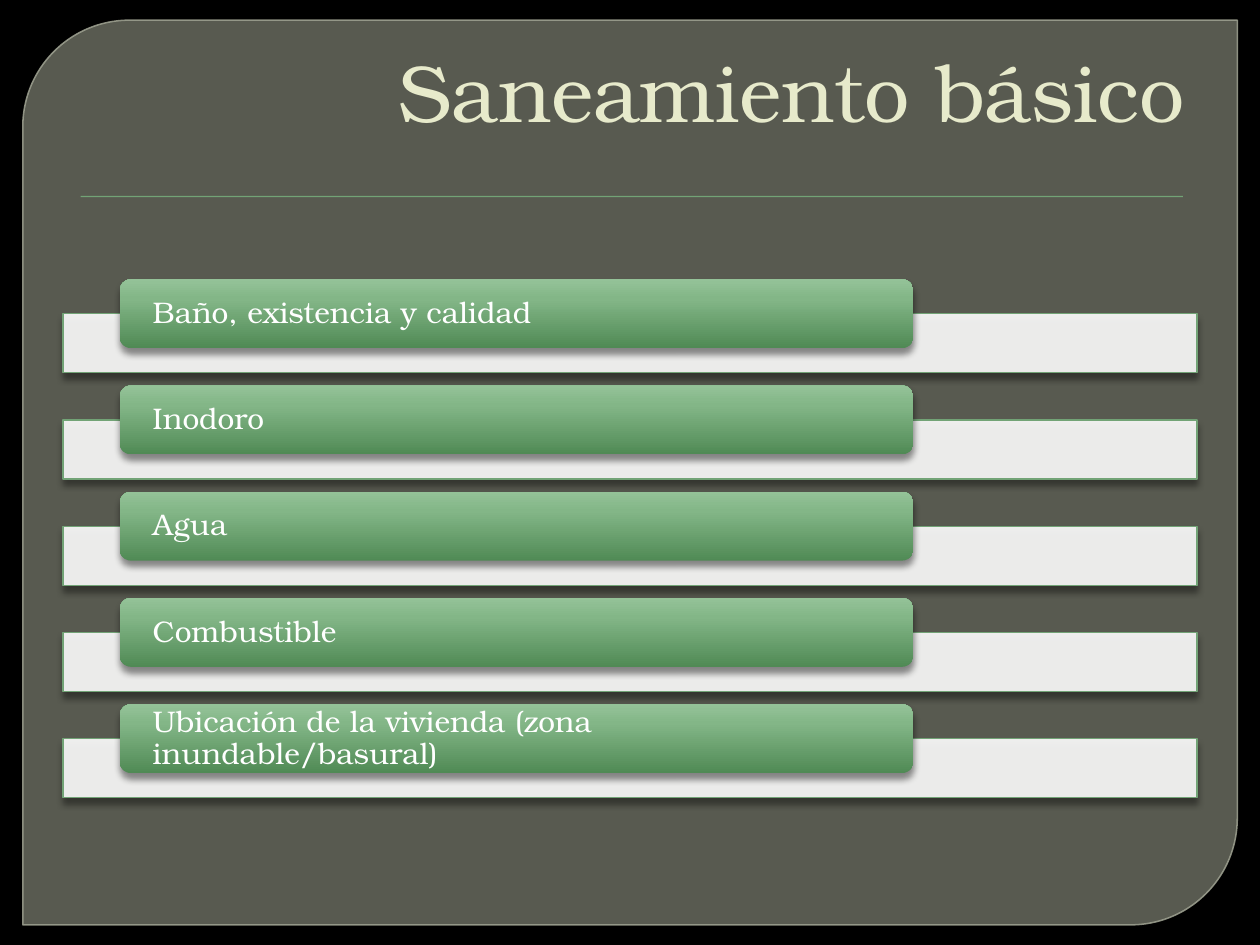
from copy import deepcopy

from pptx import Presentation
from pptx.dml.color import RGBColor
from pptx.enum.shapes import MSO_SHAPE as Preset
from pptx.enum.text import MSO_ANCHOR as Anchor, PP_ALIGN as Align
from pptx.oxml.ns import qn
from pptx.util import Pt
from lxml.etree import SubElement

COLORS = {
    "back": "000000", "panel": "888B7B", "edge": "9DA090", "green": "72A376",
    "title": "E7EACB", "white": "FFFFFF", "shadow": "000000",
}
TAG_STOPS = [(0, "508A55"), (0.72, "83B687"), (1, "94C298")]
FONT = "TeX Gyre Bonum"
TOPICS = [
    "Baño, existencia y calidad",
    "Inodoro",
    "Agua",
    "Combustible",
    "Ubicación de la vivienda (zona inundable/basural)",
]


def rgb(name):
    return RGBColor.from_string(COLORS[name])


def set_alpha(fill_parent, percent):
    color = fill_parent.find(qn("a:solidFill"))[0]
    SubElement(color, qn("a:alpha"), val=str(percent * 1000))


def add_shadow(shape, alpha, blur, distance):
    """Cast a soft shadow straight down; blur and distance are in points."""
    effects = shape._element.spPr.find(qn("a:effectLst"))
    outer = SubElement(effects, qn("a:outerShdw"), blurRad=str(Pt(blur)),
                       dist=str(Pt(distance)), dir="5400000", rotWithShape="0")
    color = SubElement(outer, qn("a:srgbClr"), val=COLORS["shadow"])
    SubElement(color, qn("a:alpha"), val=str(alpha * 1000))


def add_block(page, preset, left, top, width, height, fill=None, alpha=100,
              line=None, weight=0.75):
    shape = page.shapes.add_shape(preset, Pt(left), Pt(top), Pt(width), Pt(height))
    shape.shadow.inherit = False
    if fill:
        shape.fill.solid()
        shape.fill.fore_color.rgb = rgb(fill)
        set_alpha(shape._element.spPr, alpha)
    if line:
        shape.line.color.rgb = rgb(line)
        shape.line.width = Pt(weight)
    else:
        shape.line.fill.background()
    return shape


def write(frame, text, size, color, align, anchor):
    frame.word_wrap = True
    frame.vertical_anchor = anchor
    para = frame.paragraphs[0]
    para.text = text
    para.alignment = align
    para.font.name = FONT
    para.font.size = Pt(size)
    para.font.color.rgb = rgb(color)
    return para


def add_panel(page, left, top, width, height):
    panel = add_block(page, Preset.ROUND_2_DIAG_RECTANGLE, left, top, width, height,
                      "panel", 65, "edge", 0.87)
    panel.adjustments[0] = 0.118
    panel.adjustments[1] = 0
    set_alpha(panel.line._get_or_add_ln(), 88)


def add_title(page, left, top, width, height, text):
    box = page.shapes.add_textbox(Pt(left), Pt(top), Pt(width), Pt(height))
    write(box.text_frame, text, 46, "title", Align.RIGHT, Anchor.BOTTOM)
    rule = add_block(page, Preset.RECTANGLE, left + 10, top + 92, width - 18, 0.72,
                     "green")
    add_shadow(rule, 75, 1, 1)


def add_tag(page, left, top, width, height, text):
    tag = add_block(page, Preset.ROUNDED_RECTANGLE, left, top, width, height)
    tag.fill.gradient()
    tag.fill.gradient_angle = 90
    stops = tag._element.spPr.find(qn("a:gradFill")).find(qn("a:gsLst"))
    stops.append(deepcopy(stops[0]))
    for stop, (position, color) in zip(tag.fill.gradient_stops, TAG_STOPS):
        stop.position = position
        stop.color.rgb = RGBColor.from_string(color)
    add_shadow(tag, 43, 4, 3)
    frame = tag.text_frame
    frame.margin_left = frame.margin_right = Pt(17)
    frame.margin_top = frame.margin_bottom = 0
    para = write(frame, text, 17, "white", Align.LEFT, Anchor.MIDDLE)
    para.line_spacing = 0.9


def add_topic_list(page, left, top, width, pitch, topics):
    """Stack bars, each with a tag overlapping its upper edge."""
    for index, topic in enumerate(topics):
        row_top = top + index * pitch
        bar = add_block(page, Preset.RECTANGLE, left, row_top + 19.7, width, 33.8,
                        "white", 90, "green")
        add_shadow(bar, 43, 4, 3)
        add_tag(page, left + width * 0.05, row_top, width * 0.7, 39.4, topic)


def main():
    deck = Presentation()
    deck.slide_width, deck.slide_height = Pt(720), Pt(540)
    page = deck.slides.add_slide(deck.slide_layouts[6])
    page.background.fill.solid()
    page.background.fill.fore_color.rgb = rgb("back")
    add_panel(page, 13, 11.5, 694, 517)
    add_title(page, 36, 20, 648, 63, "Saneamiento básico")
    add_topic_list(page, 36, 159.6, 648, 60.7, TOPICS)
    deck.save("out.pptx")


if __name__ == "__main__":
    main()
